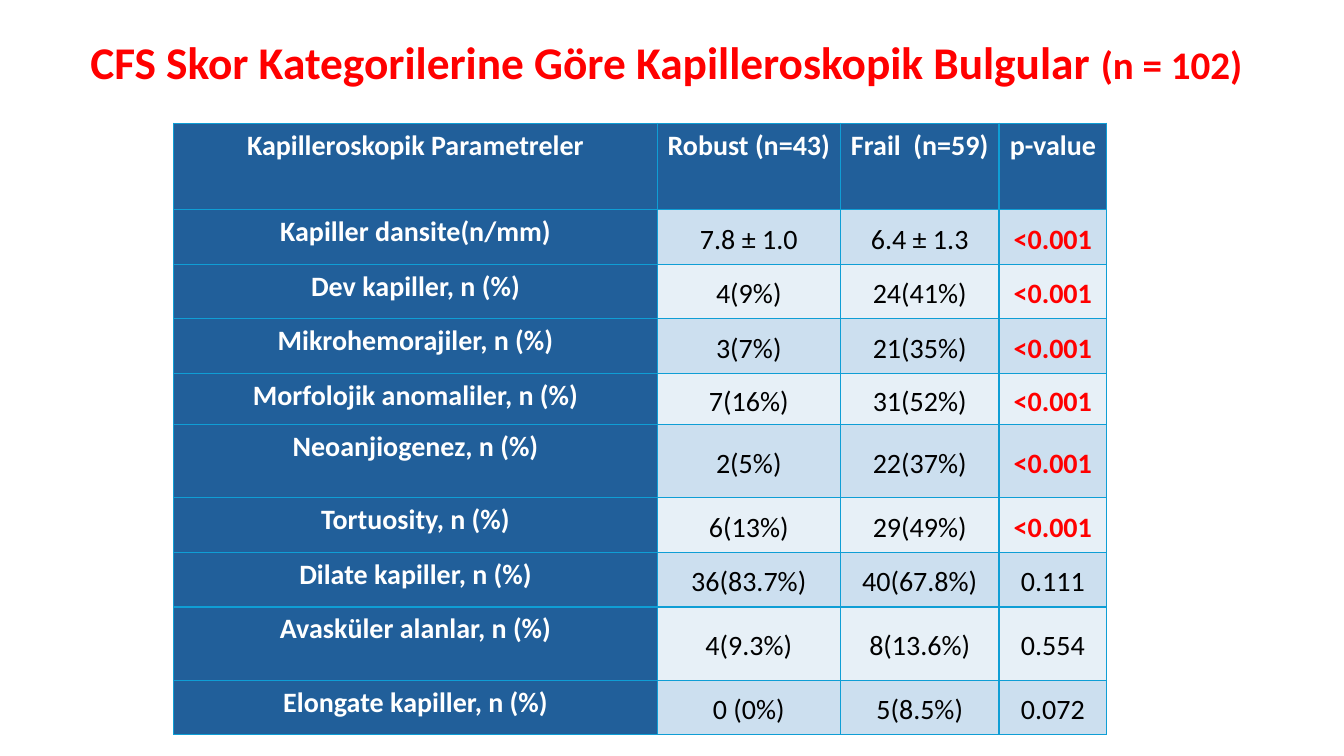
from dataclasses import dataclass
from lxml.etree import SubElement
from pptx import Presentation
from pptx.dml.color import RGBColor
from pptx.enum.text import MSO_ANCHOR as Anchor, PP_ALIGN as Align
from pptx.oxml.ns import qn
from pptx.util import Pt

# Content
TITLE = "CFS Skor Kategorilerine Göre Kapilleroskopik Bulgular "
SAMPLE = "(n = 102)"
HEADER = ("Kapilleroskopik Parametreler", "Robust (n=43)", "Frail  (n=59)", "p-value")
FINDINGS = [
    ("Kapiller dansite(n/mm)", "7.8 ± 1.0", "6.4 ± 1.3", "<0.001"),
    ("Dev kapiller, n (%)", "4(9%)", "24(41%)", "<0.001"),
    ("Mikrohemorajiler, n (%)", "3(7%)", "21(35%)", "<0.001"),
    ("Morfolojik anomaliler, n (%)", "7(16%)", "31(52%)", "<0.001"),
    ("Neoanjiogenez, n (%)", "2(5%)", "22(37%)", "<0.001"),
    ("Tortuosity, n (%)", "6(13%)", "29(49%)", "<0.001"),
    ("Dilate kapiller, n (%)", "36(83.7%)", "40(67.8%)", "0.111"),
    ("Avasküler alanlar, n (%)", "4(9.3%)", "8(13.6%)", "0.554"),
    ("Elongate kapiller, n (%)", "0 (0%)", "5(8.5%)", "0.072"),
]


@dataclass(frozen=True)
class Theme:
    font: str = "Calibri"
    title_size: float = 32.4
    sample_size: float = 27.9
    table_size: float = 20
    accent: str = "FF0000"
    head_fill: str = "215F9A"
    head_text: str = "FFFFFF"
    body_text: str = "000000"
    bands: tuple = ("E7F0F7", "CCDFEF")
    border: str = "0F9ED5"


theme = Theme()

# Layout in points
SLIDE = (960, 540)
TITLE_BOX = (26, 20, 900, 52)
TABLE_AT = (124.2, 88)
COLUMNS = (345.2, 131, 113.2, 77)
HEAD_ROW, ROW = 61.8, 39
ROW_EXCEPTIONS = {4: 36.5, 5: 52.4, 8: 52.4}
INSET = 5


def style(font, size, color, bold):
    font.name, font.size, font.bold = theme.font, Pt(size), bold
    font.color.rgb = RGBColor.from_string(color)


def add_borders(cell):
    tc_pr = cell._tc.get_or_add_tcPr()
    for side in ("a:lnL", "a:lnR", "a:lnT", "a:lnB"):
        line = SubElement(tc_pr, qn(side), w=str(Pt(1)))
        fill = SubElement(line, qn("a:solidFill"))
        SubElement(fill, qn("a:srgbClr"), val=theme.border)


def fill_cell(cell, text, row, col):
    heading = row == 0 or col == 0
    significant = text.startswith("<")
    color = (theme.head_text if heading
             else theme.accent if significant else theme.body_text)
    fill = theme.head_fill if heading else theme.bands[row % 2]

    # Borders come before the fill in the cell properties
    add_borders(cell)
    cell.fill.solid()
    cell.fill.fore_color.rgb = RGBColor.from_string(fill)
    cell.margin_left = cell.margin_right = Pt(INSET)
    cell.margin_top = cell.margin_bottom = 0
    cell.vertical_anchor = Anchor.TOP if heading else Anchor.MIDDLE

    p = cell.text_frame.paragraphs[0]
    p.text = text
    p.alignment = Align.CENTER
    p.line_spacing, p.space_after = 1.15, Pt(8)
    style(p.font, theme.table_size, color, heading or significant)
    style(p.runs[0].font, theme.table_size, color, heading or significant)


def main():
    prs = Presentation()
    prs.slide_width, prs.slide_height = map(Pt, SLIDE)
    s = prs.slides.add_slide(prs.slide_layouts[6])

    # Title
    tf = s.shapes.add_textbox(*map(Pt, TITLE_BOX)).text_frame
    tf.word_wrap = True
    tf.vertical_anchor = Anchor.MIDDLE
    p = tf.paragraphs[0]
    p.alignment, p.line_spacing = Align.CENTER, 0.9
    for text, size in ((TITLE, theme.title_size), (SAMPLE, theme.sample_size)):
        r = p.add_run()
        r.text = text
        style(r.font, size, theme.accent, True)

    # Findings table
    rows = [HEADER, *FINDINGS]
    heights = [HEAD_ROW] + [ROW_EXCEPTIONS.get(i, ROW) for i in range(1, len(rows))]
    table = s.shapes.add_table(
        len(rows), len(COLUMNS), *map(Pt, TABLE_AT),
        Pt(sum(COLUMNS)), Pt(sum(heights))).table
    for column, width in zip(table.columns, COLUMNS):
        column.width = Pt(width)
    for i, (values, height) in enumerate(zip(rows, heights)):
        table.rows[i].height = Pt(height)
        for j, text in enumerate(values):
            fill_cell(table.cell(i, j), text, i, j)

    prs.save("out.pptx")


if __name__ == "__main__":
    main()
